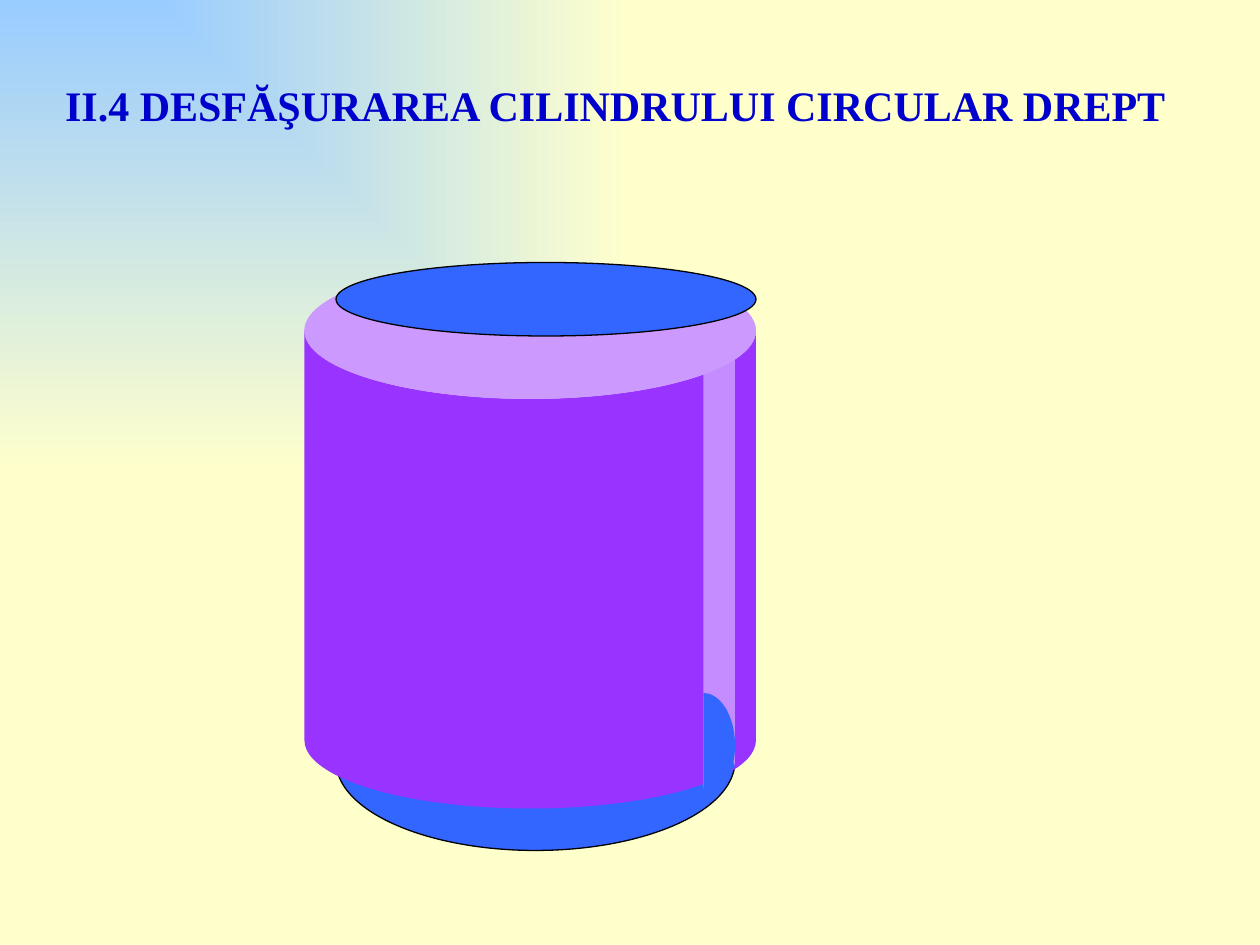
from pptx import Presentation
from pptx.dml.color import RGBColor
from pptx.enum import shapes as sh, text as tx
from pptx.oxml import parse_xml
from pptx.oxml.ns import nsdecls, qn
from pptx.util import Pt

BLUE, LILAC, VIOLET = "3366FF", "CC99FF", "9933FF"


def color(target, code):
    target.rgb = RGBColor.from_string(code)


def backdrop(slide, inner, outer):
    """Gradient that spreads from the top left corner."""
    slide.background.fill.solid()
    solid = slide.element.find(".//" + qn("a:solidFill"))
    stops = "".join(
        f'<a:gs pos="{pos}"><a:srgbClr val="{code}"/></a:gs>'
        for pos, code in ((0, inner), (100000, outer)))
    grad = parse_xml(
        f'<a:gradFill {nsdecls("a")} rotWithShape="1"><a:gsLst>{stops}</a:gsLst>'
        '<a:path path="rect"><a:fillToRect r="100000" b="100000"/></a:path>'
        '</a:gradFill>')
    solid.getparent().replace(solid, grad)


def paint(shape, fill, edge=None, alpha=None):
    shape.shadow.inherit = False
    shape.fill.solid()
    color(shape.fill.fore_color, fill)
    if alpha:
        tint = shape.fill._xPr.find(".//" + qn("a:srgbClr"))
        tint.append(parse_xml(f'<a:alpha {nsdecls("a")} val="{alpha * 1000}"/>'))
    if edge:
        color(shape.line.color, edge)
        shape.line.width = Pt(0.75)
    else:
        shape.line.fill.background()


def solid(slide, kind, box, fill, edge=None, adj=None, turn=0):
    shape = slide.shapes.add_shape(kind, *map(Pt, box))
    if adj is not None:
        shape.adjustments[0] = adj
    shape.rotation = turn
    paint(shape, fill, edge)


def patch(slide, dots, fill, close=True, alpha=None):
    first, *rest = dots
    pen = slide.shapes.build_freeform(*first, scale=Pt(1))
    pen.add_line_segments(rest, close=close)
    paint(pen.convert_to_shape(), fill, alpha=alpha)


def heading(slide, words, box):
    title = slide.shapes.title
    title.left, title.top, title.width, title.height = map(Pt, box)
    frame = title.text_frame
    frame.word_wrap = True
    frame.auto_size = tx.MSO_AUTO_SIZE.SHAPE_TO_FIT_TEXT
    frame.vertical_anchor = tx.MSO_ANCHOR.TOP
    para = frame.paragraphs[0]
    para.alignment = tx.PP_ALIGN.LEFT
    para.space_before = Pt(12)
    run = para.add_run()
    run.text = words
    font = run.font
    font.name, font.size, font.bold = "Times New Roman", Pt(24), True
    color(font.color, "0000CC")


def main():
    deck = Presentation()
    deck.slide_width, deck.slide_height = Pt(720), Pt(540)
    slide = deck.slides.add_slide(deck.slide_layouts[5])
    backdrop(slide, "99CCFF", "FFFFCC")
    heading(slide, "II.4 DESFĂŞURAREA CILINDRULUI CIRCULAR DREPT",
            (30, 42, 672, 36))

    # Lower base, wall, rim and upper base
    kind = sh.MSO_SHAPE
    solid(slide, kind.OVAL, (192, 384, 228, 102), BLUE, "000000")
    solid(slide, kind.CAN, (174, 150, 258, 312), VIOLET, adj=0.302)
    solid(slide, kind.OVAL, (174, 150, 258, 78), LILAC)
    solid(slide, kind.OVAL, (192, 150, 240, 42), BLUE, "000000")

    # Slit in the wall, with the lower base showing through
    patch(slide, [(390, 198.6), (420, 186), (420, 437.4), (402, 450),
                  (402, 192.3)], LILAC, close=False, alpha=88)
    patch(slide, [(402, 456), (402, 396), (420, 438)], BLUE)
    solid(slide, kind.MOON, (402, 396, 18, 60), BLUE, adj=0.875, turn=180)

    deck.save("out.pptx")


if __name__ == "__main__":
    main()
